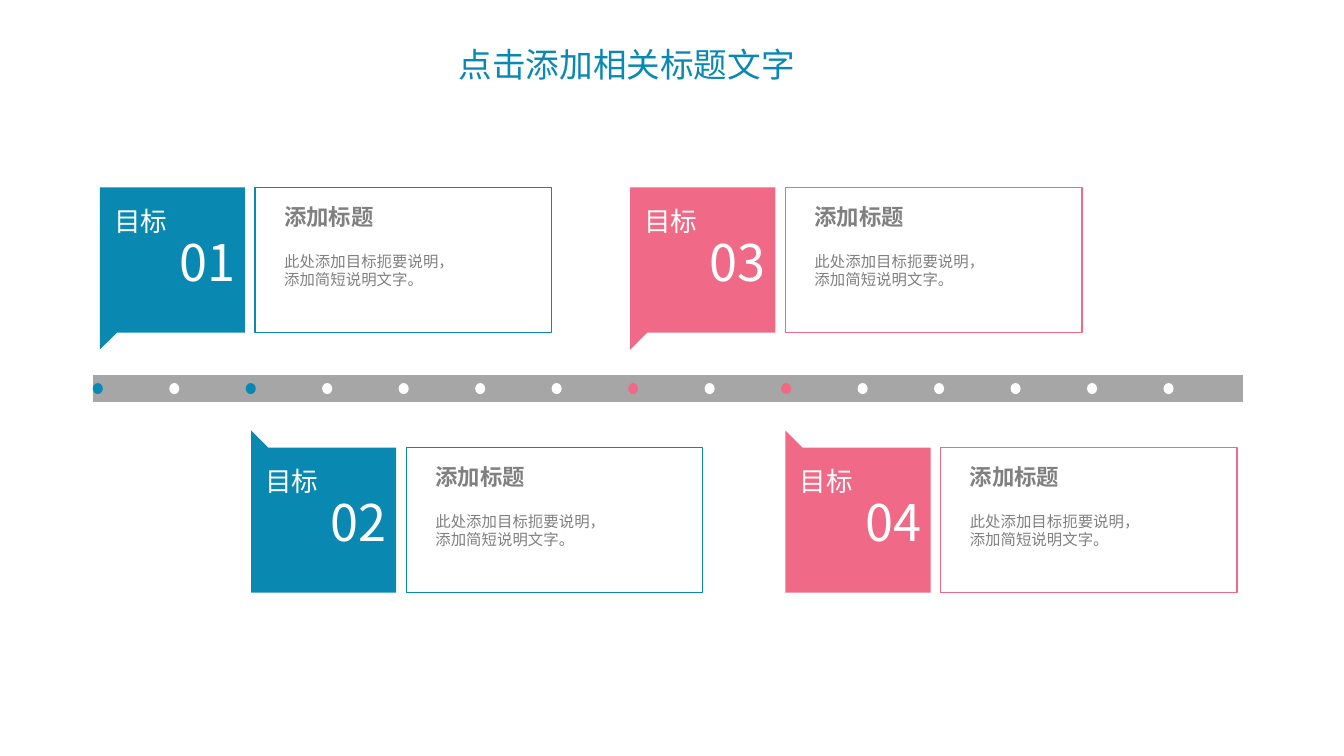
from lxml.etree import SubElement
from pptx import Presentation
from pptx.dml.color import RGBColor
from pptx.enum.shapes import MSO_SHAPE
from pptx.enum.text import MSO_AUTO_SIZE, PP_ALIGN
from pptx.oxml.ns import qn
from pptx.util import Inches, Pt

BLUE, PINK, WHITE = "0989B1", "F06A87", "FFFFFF"
BAR_GRAY, TEXT_GRAY = "A6A6A6", "808080"
DOT_COUNT = 15
DOT_PITCH = 10.62 / (DOT_COUNT - 1)
DOT_COLORS = {0: BLUE, 2: BLUE, 7: PINK, 9: PINK}
SQUARE, TAIL = 1.44, 0.17
GOALS = [
    ("01", 0.99, 1.86, BLUE, True),
    ("02", 2.49, 4.44, BLUE, False),
    ("03", 6.25, 1.86, PINK, True),
    ("04", 7.79, 4.44, PINK, False),
]


def color(value):
    return RGBColor.from_string(value)


class TimelineSlide:
    """Draws styled timeline elements on one slide."""

    font_name = "Noto Sans CJK SC"

    def __init__(self, presentation):
        self.slide = presentation.slides.add_slide(presentation.slide_layouts[6])
        self.shapes = self.slide.shapes

    def paint(self, shape, fill=None, line=None):
        shape.shadow.inherit = False
        if fill:
            shape.fill.solid()
            shape.fill.fore_color.rgb = color(fill)
        else:
            shape.fill.background()
        if line:
            shape.line.color.rgb = color(line)
            shape.line.width = Pt(1)
        else:
            shape.line.fill.background()

    def preset(self, parent, kind, box, fill=None, line=None):
        shape = parent.add_shape(kind, *map(Inches, box))
        self.paint(shape, fill, line)

    def outline(self, parent, points, fill):
        corners = [(Inches(x), Inches(y)) for x, y in points]
        builder = parent.build_freeform(*corners[0], scale=1.0)
        builder.add_line_segments(corners[1:], close=True)
        self.paint(builder.convert_to_shape(), fill)

    def text(self, parent, box, content, size, text_color, bold=False,
             align=PP_ALIGN.LEFT, wrap=True, insets=(0.1, 0.05)):
        text_frame = parent.add_textbox(*map(Inches, box)).text_frame
        text_frame.text = content
        text_frame.word_wrap = wrap
        text_frame.auto_size = MSO_AUTO_SIZE.SHAPE_TO_FIT_TEXT
        text_frame.margin_left = text_frame.margin_right = Inches(insets[0])
        text_frame.margin_top = text_frame.margin_bottom = Inches(insets[1])
        for paragraph in text_frame.paragraphs:
            paragraph.alignment = align
            for run in paragraph.runs:
                run.font.size = Pt(size)
                run.font.bold = bold
                run.font.color.rgb = color(text_color)
                run.font.name = self.font_name
                east_asian = SubElement(run._r.get_or_add_rPr(), qn("a:ea"))
                east_asian.set("typeface", self.font_name)

    def timeline(self):
        self.outline(self.shapes, [(0.92, 3.72), (12.33, 3.72), (12.33, 3.99), (0.92, 3.99)], BAR_GRAY)
        for index in range(DOT_COUNT):
            self.preset(self.shapes, MSO_SHAPE.OVAL, (0.92 + index * DOT_PITCH, 3.8, 0.1, 0.11),
                        DOT_COLORS.get(index, WHITE))

    def flag(self, number, left, top, fill, points_down):
        group = self.shapes.add_group_shape().shapes
        right, bottom = left + SQUARE, top + SQUARE
        if points_down:
            far, near, tip = top, bottom, bottom + TAIL
        else:
            far, near, tip = bottom, top, top - TAIL
        self.outline(group, [(left, far), (right, far), (right, near), (left + TAIL, near), (left, tip)], fill)
        self.text(group, (left + 0.79, top + 0.43, 0.61, 0.61), number, 36, WHITE, insets=(0, 0))
        self.text(group, (left + 0.04, top + 0.12, 0.73, 0.42), "目标", 19, WHITE,
                  align=PP_ALIGN.CENTER, wrap=False)

    def card(self, left, top, line):
        group = self.shapes.add_group_shape().shapes
        self.preset(group, MSO_SHAPE.RECTANGLE, (left, top, 2.94, SQUARE), line=line)
        self.text(group, (left + 0.19, top + 0.11, 2.13, 0.37), "添加标题", 16, TEXT_GRAY, bold=True)
        self.text(group, (left + 0.19, top + 0.59, 2.53, 0.47),
                  "此处添加目标扼要说明，\n添加简短说明文字。", 11, TEXT_GRAY, align=PP_ALIGN.JUSTIFY)


def main():
    presentation = Presentation()
    presentation.slide_width = Inches(13.33)
    presentation.slide_height = Inches(7.5)
    slide = TimelineSlide(presentation)
    slide.text(slide.shapes, (4.46, 0.39, 3.57, 0.5), "点击添加相关标题文字", 24, BLUE, insets=(0.09, 0.05))
    slide.timeline()
    for number, left, top, accent, points_down in GOALS:
        slide.flag(number, left, top, accent, points_down)
        slide.card(left + 1.54, top, accent)
    presentation.save("out.pptx")


if __name__ == "__main__":
    main()
